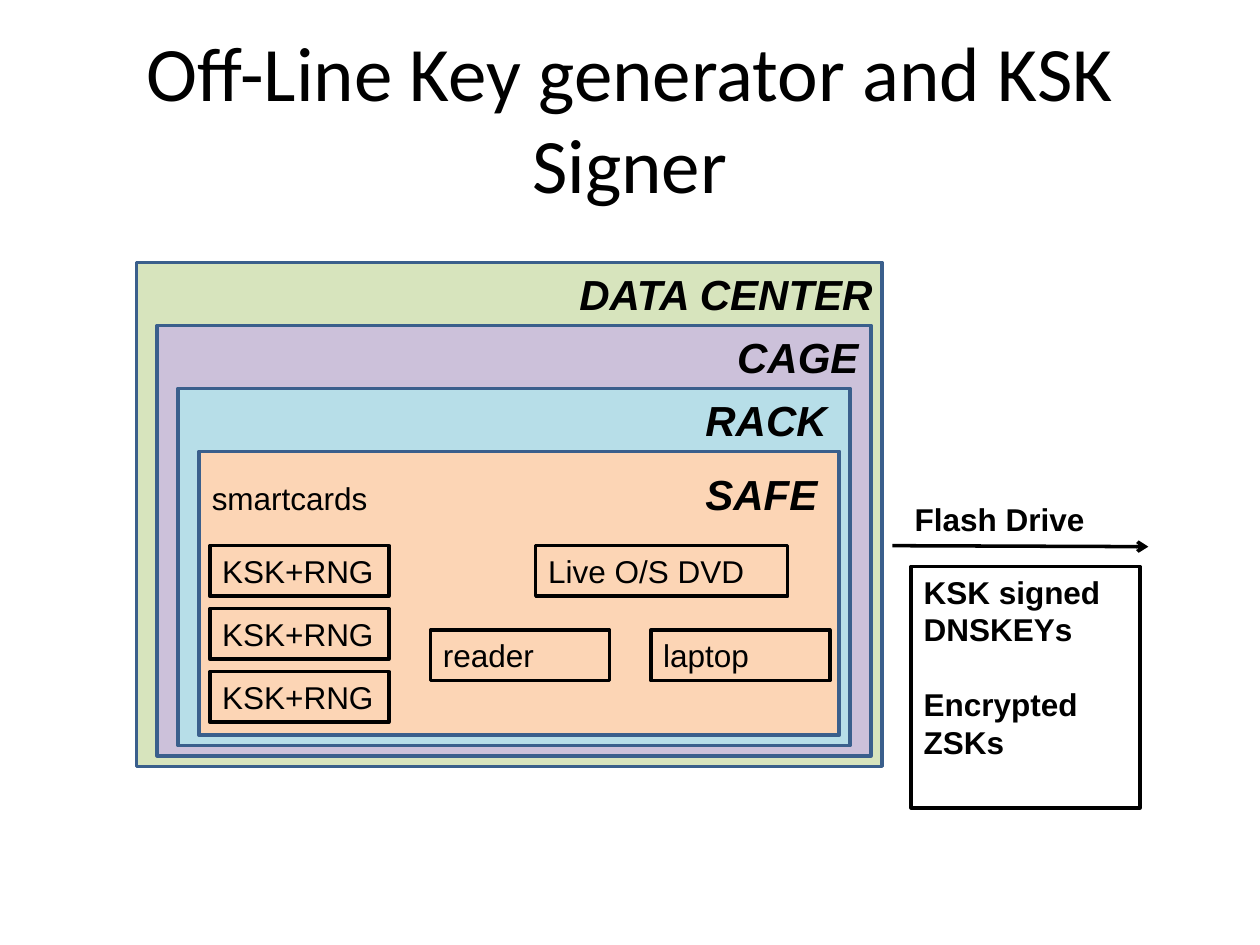
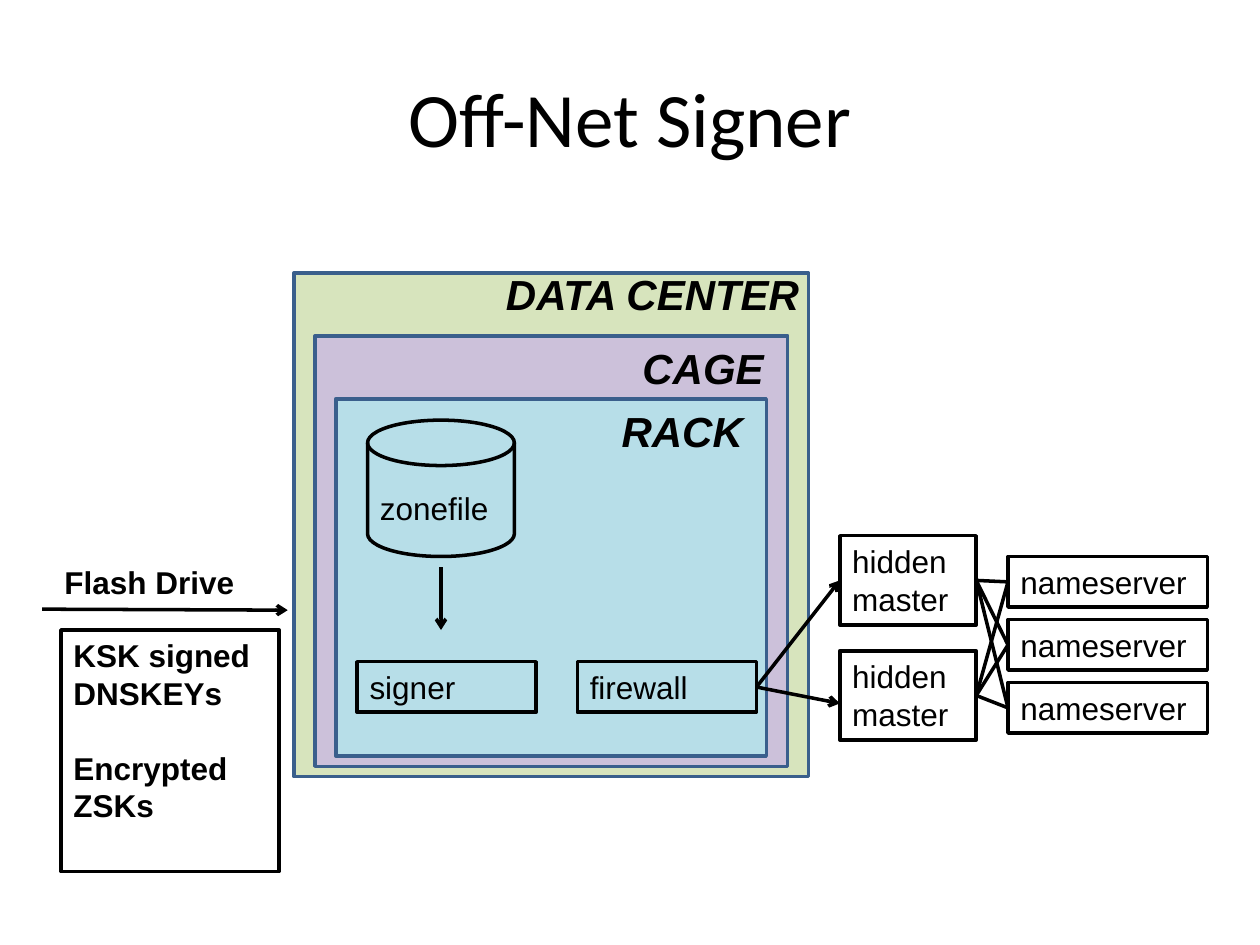
from dataclasses import dataclass
from itertools import product

from lxml.etree import SubElement
from pptx import Presentation
from pptx.dml.color import RGBColor
from pptx.enum.shapes import MSO_CONNECTOR, MSO_SHAPE
from pptx.enum.text import MSO_ANCHOR, MSO_AUTO_SIZE, PP_ALIGN
from pptx.oxml.ns import qn
from pptx.shapes.autoshape import Shape
from pptx.shapes.connector import Connector
from pptx.slide import Slide
from pptx.text.text import TextFrame
from pptx.util import Cm, Pt

COLORS = {
    "ink": "000000",
    "zone_edge": "3A5F8C",
    "data_center": "D7E4BD",
    "cage": "CCC1DA",
    "rack": "B7DEE8",
    "safe": "FCD5B5",
}
TITLE_FONT = "Calibri"
BODY_FONT = "Arial"
LINE_WIDTH = Pt(2)
LEFT_SIDE, RIGHT_SIDE = 1, 3
BOX_HEIGHT = 1.02
BOX_WIDTH = 3.61
ROW_STEP = 1.27
ZONE_HEIGHT = 10.16
ZONE_INSET = 0.42
ZONE_SHRINK = 1.48


@dataclass(frozen=True)
class Zone:
    name: str
    color: str
    width: float
    label_left: float
    label_top: float
    label_width: float = 4.02


@dataclass(frozen=True)
class Node:
    text: str
    left: float
    top: float
    width: float = BOX_WIDTH
    height: float = BOX_HEIGHT


OFFLINE_ZONES = [
    Zone("DATA CENTER", "data_center", 15.03, 11.43, 5.29, 7.62),
    Zone("CAGE", "cage", 14.39, 14.61, 6.56),
    Zone("RACK", "rack", 13.55, 13.97, 7.83),
    Zone("SAFE", "safe", 12.91, 13.97, 9.31),
]
OFFLINE_NODES = [
    *[Node("KSK+RNG", 4.23, 11 + row * ROW_STEP) for row in range(3)],
    Node("reader", 8.68, 12.7),
    Node("laptop", 13.12, 12.7),
    Node("Live O/S DVD", 10.8, 11, 5.08),
]
OFFNET_ZONES = [
    Zone("DATA CENTER", "data_center", 10.37, 9.95, 5.29, 7.62),
    Zone("CAGE", "cage", 9.53, 12.7, 6.77),
    Zone("RACK", "rack", 8.68, 12.28, 8.04),
]
SIGNER = Node("signer", 7.2, 13.34)
FIREWALL = Node("firewall", 11.64, 13.34)
HIDDEN_MASTERS = [
    Node("hidden master", 16.93, top, 2.75, 1.8) for top in (10.8, 13.12)
]
NAMESERVERS = [
    Node("nameserver", 20.32, 11.22 + row * ROW_STEP, 4.02) for row in range(3)
]


def ink(name: str) -> RGBColor:
    return RGBColor.from_string(COLORS[name])


def write_text(
    frame: TextFrame,
    text: str,
    *,
    size: int = 18,
    font: str = BODY_FONT,
    bold: bool = False,
    italic: bool = False,
    align: PP_ALIGN = PP_ALIGN.LEFT,
    anchor: MSO_ANCHOR = MSO_ANCHOR.TOP,
    gap: int = 0,
) -> None:
    frame.word_wrap = True
    frame.auto_size = MSO_AUTO_SIZE.NONE
    frame.vertical_anchor = anchor
    for index, line in enumerate(text.split("\n")):
        para = frame.add_paragraph() if index else frame.paragraphs[0]
        para.alignment = align
        para.space_before = Pt(gap if index else 0)
        span = para.add_run()
        span.text = line
        span.font.size = Pt(size)
        span.font.name = font
        span.font.bold = bold
        span.font.italic = italic
        span.font.color.rgb = ink("ink")


def add_page(deck: Presentation, title: str) -> Slide:
    page = deck.slides.add_slide(deck.slide_layouts[5])
    heading = page.shapes.title
    heading.left, heading.top = Cm(1.27), Cm(0.76)
    heading.width, heading.height = Cm(22.86), Cm(3.18)
    write_text(
        heading.text_frame,
        title,
        size=44,
        font=TITLE_FONT,
        align=PP_ALIGN.CENTER,
        anchor=MSO_ANCHOR.MIDDLE,
    )
    return page


def add_outline(
    page: Slide,
    left: float,
    top: float,
    width: float,
    height: float,
    *,
    kind: MSO_SHAPE = MSO_SHAPE.RECTANGLE,
    fill: str | None = None,
    edge: str = "ink",
) -> Shape:
    box = page.shapes.add_shape(kind, Cm(left), Cm(top), Cm(width), Cm(height))
    box.shadow.inherit = False
    if fill:
        box.fill.solid()
        box.fill.fore_color.rgb = ink(fill)
    else:
        box.fill.background()
    box.line.color.rgb = ink(edge)
    box.line.width = LINE_WIDTH
    return box


def add_label(
    page: Slide, text: str, left: float, top: float, width: float, **style
) -> None:
    label = page.shapes.add_textbox(Cm(left), Cm(top), Cm(width), Cm(BOX_HEIGHT))
    write_text(label.text_frame, text, **style)


def add_node(page: Slide, node: Node) -> Shape:
    box = add_outline(page, node.left, node.top, node.width, node.height)
    write_text(box.text_frame, node.text)
    return box


def add_line(
    page: Slide,
    start: tuple[float, float] = (0, 0),
    end: tuple[float, float] = (0, 0),
    *,
    arrow: bool = False,
) -> Connector:
    points = [Cm(value) for value in (*start, *end)]
    line = page.shapes.add_connector(MSO_CONNECTOR.STRAIGHT, *points)
    line.line.color.rgb = ink("ink")
    line.line.width = LINE_WIDTH
    properties = line._element.spPr
    if arrow:
        SubElement(properties.find(qn("a:ln")), qn("a:tailEnd"), type="arrow")
    SubElement(properties, qn("a:effectLst"))
    return line


def join_boxes(
    page: Slide, source: Shape, target: Shape, *, arrow: bool = False
) -> None:
    line = add_line(page, arrow=arrow)
    line.begin_connect(source, RIGHT_SIDE)
    line.end_connect(target, LEFT_SIDE)


def add_zones(page: Slide, left: float, top: float, zones: list[Zone]) -> None:
    for depth, zone in enumerate(zones):
        add_outline(
            page,
            left + depth * ZONE_INSET,
            top + depth * ROW_STEP,
            zone.width,
            ZONE_HEIGHT - depth * ZONE_SHRINK,
            fill=zone.color,
            edge="zone_edge",
        )
    for zone in zones:
        add_label(
            page,
            zone.name,
            zone.label_left,
            zone.label_top,
            zone.label_width,
            size=24,
            bold=True,
            italic=True,
        )


def add_flash_drive(page: Slide, left: float, top: float, length: float) -> None:
    contents = add_outline(page, left + 0.38, top + 0.42, length - 0.55, 4.87)
    write_text(
        contents.text_frame, "KSK signed DNSKEYs\nEncrypted ZSKs", bold=True, gap=21
    )
    add_label(page, "Flash Drive", left + 0.2, top - 1.05, length + 0.35, bold=True)
    add_line(page, (left, top), (left + length, top + 0.02), arrow=True)


def build_offline_page(deck: Presentation) -> None:
    page = add_page(deck, "Off-Line Key generator and KSK Signer")
    add_zones(page, 2.75, 5.29, OFFLINE_ZONES)
    add_label(page, "smartcards", 4.02, 9.53, 4.02)
    for node in OFFLINE_NODES:
        add_node(page, node)
    add_flash_drive(page, 17.99, 11, 5.16)


def build_offnet_page(deck: Presentation) -> None:
    page = add_page(deck, "Off-Net Signer")
    add_zones(page, 5.93, 5.5, OFFNET_ZONES)
    add_flash_drive(page, 0.85, 12.28, 4.95)
    add_outline(page, 7.41, 8.47, 2.96, 2.75, kind=MSO_SHAPE.FLOWCHART_MAGNETIC_DISK)
    add_label(page, "zonefile", 7.41, 9.74, BOX_WIDTH)
    add_line(page, (8.89, 11.43), (8.89, 12.7), arrow=True)
    add_node(page, SIGNER)
    firewall = add_node(page, FIREWALL)
    masters = [add_node(page, node) for node in HIDDEN_MASTERS]
    nameservers = [add_node(page, node) for node in NAMESERVERS]
    join_boxes(page, firewall, masters[0], arrow=True)
    lower_feed = add_line(page, end=(16.93, 14.18), arrow=True)
    lower_feed.begin_connect(firewall, RIGHT_SIDE)
    for master, nameserver in product(masters, nameservers):
        join_boxes(page, master, nameserver)


def main() -> None:
    deck = Presentation()
    deck.slide_width, deck.slide_height = Cm(25.4), Cm(19.05)
    build_offline_page(deck)
    build_offnet_page(deck)
    deck.save("out.pptx")


if __name__ == "__main__":
    main()
